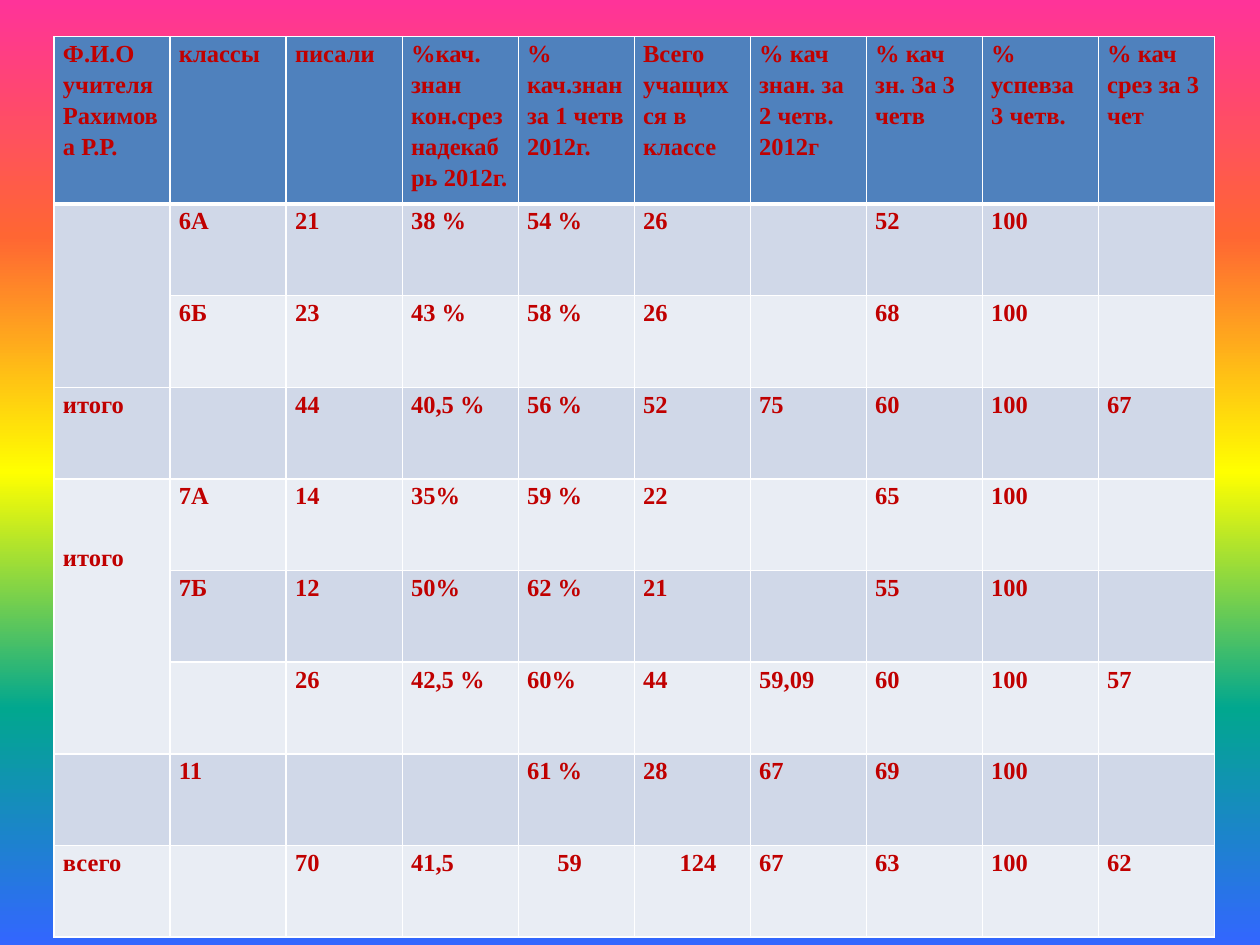
from lxml.etree import SubElement as Sub
from pptx import Presentation
from pptx.dml.color import RGBColor as Rgb
from pptx.oxml.ns import qn
from pptx.util import Inches as In, Pt

FONT = "Times New Roman"
RED, WHITE = "C00000", "FFFFFF"
HEAD, DARK, PALE = "4F81BD", "D0D8E8", "E9EDF4"


def hue(code):
    return Rgb.from_string(code)


def write(cell, text, size=14, color=RED, bold=True, left=0.07, top=0):
    cell.margin_left, cell.margin_right = In(left), In(0.07)
    cell.margin_top, cell.margin_bottom = In(top), 0
    frame = cell.text_frame
    frame.text = text
    for para in frame.paragraphs:
        para.line_spacing = 1.15
        para.font.size = Pt(size)
        for run in para.runs:
            run.font.name = FONT
            run.font.size = Pt(size)
            run.font.bold = bold
            run.font.color.rgb = hue(color)


deck = Presentation()
deck.slide_width, deck.slide_height = In(10), In(7.5)
slide = deck.slides.add_slide(deck.slide_layouts[6])

back = slide.background.fill
back.gradient()
back.gradient_angle = 270
stops = next(slide.element.iter(qn("a:gsLst")))
for stop in list(stops):
    stops.remove(stop)
for i, code in enumerate(["FF3399", "FF6633", "FFFF00", "01A78F", "3366FF"]):
    stop = Sub(stops, qn("a:gs"), pos=str(i * 25000))
    Sub(stop, qn("a:srgbClr"), val=code)

heads = [
    "Ф.И.О\nучителя\nРахимова Р.Р.",
    "классы",
    "писали",
    "%кач.\nзнан\nкон.срез\nнадекабрь 2012г.",
    "% кач.знан за 1 четв\n2012г.",
    "Всего\nучащих\nся в классе",
    "% кач знан. за 2 четв. 2012г",
    "% кач зн. За 3 четв",
    "% успевза\n3 четв.",
    "% кач срез за 3 чет",
]
rows = [
    heads,
    ["", "6А", "21", "38 %", "54 %", "26", "", "52", "100", ""],
    ["", "6Б", "23", "43 %", "58 %", "26", "", "68", "100", ""],
    ["итого", "", "44", "40,5 %", "56 %", "52", "75", "60", "100", "67"],
    ["итого", "7А", "14", "35%", "59 %", "22", "", "65", "100", ""],
    ["", "7Б", "12", "50%", "62 %", "21", "", "55", "100", ""],
    ["", "", "26", "42,5 %", "60%", "44", "59,09", "60", "100", "57"],
    ["", "11", "", "", "61 %", "28", "67", "69", "100", ""],
    ["всего", "", "70", "41,5", "59", "124", "67", "63", "100", "62"],
]
shifts = {(4, 0): {"top": 0.49}, (8, 4): {"left": 0.31}, (8, 5): {"left": 0.36}}

wide, tall, top = 9.21, 7.15, 1.33
step = (tall - top) / (len(rows) - 1)
grid = slide.shapes.add_table(
    len(rows), len(heads), In(0.43), In(0.29), In(wide), In(tall)
).table
grid.horz_banding = False
for col in grid.columns:
    col.width = In(wide / len(heads))
for r, row in enumerate(grid.rows):
    row.height = In(step if r else top)

for r, row in enumerate(rows):
    for c, text in enumerate(row):
        cell = grid.cell(r, c)
        write(cell, text, **shifts.get((r, c), {}))
        props = cell._tc.get_or_add_tcPr()
        for side in "LRTB":
            thick = (r, side) in [(0, "B"), (1, "T")]
            line = Sub(props, qn("a:ln" + side), w=str(Pt(3 if thick else 1)))
            Sub(Sub(line, qn("a:solidFill")), qn("a:srgbClr"), val=WHITE)
        cell.fill.solid()
        cell.fill.fore_color.rgb = hue(HEAD if r == 0 else DARK if r % 2 else PALE)

for first, last in [(1, 2), (4, 6)]:
    grid.cell(first, 0).merge(grid.cell(last, 0))

deck.save("out.pptx")
